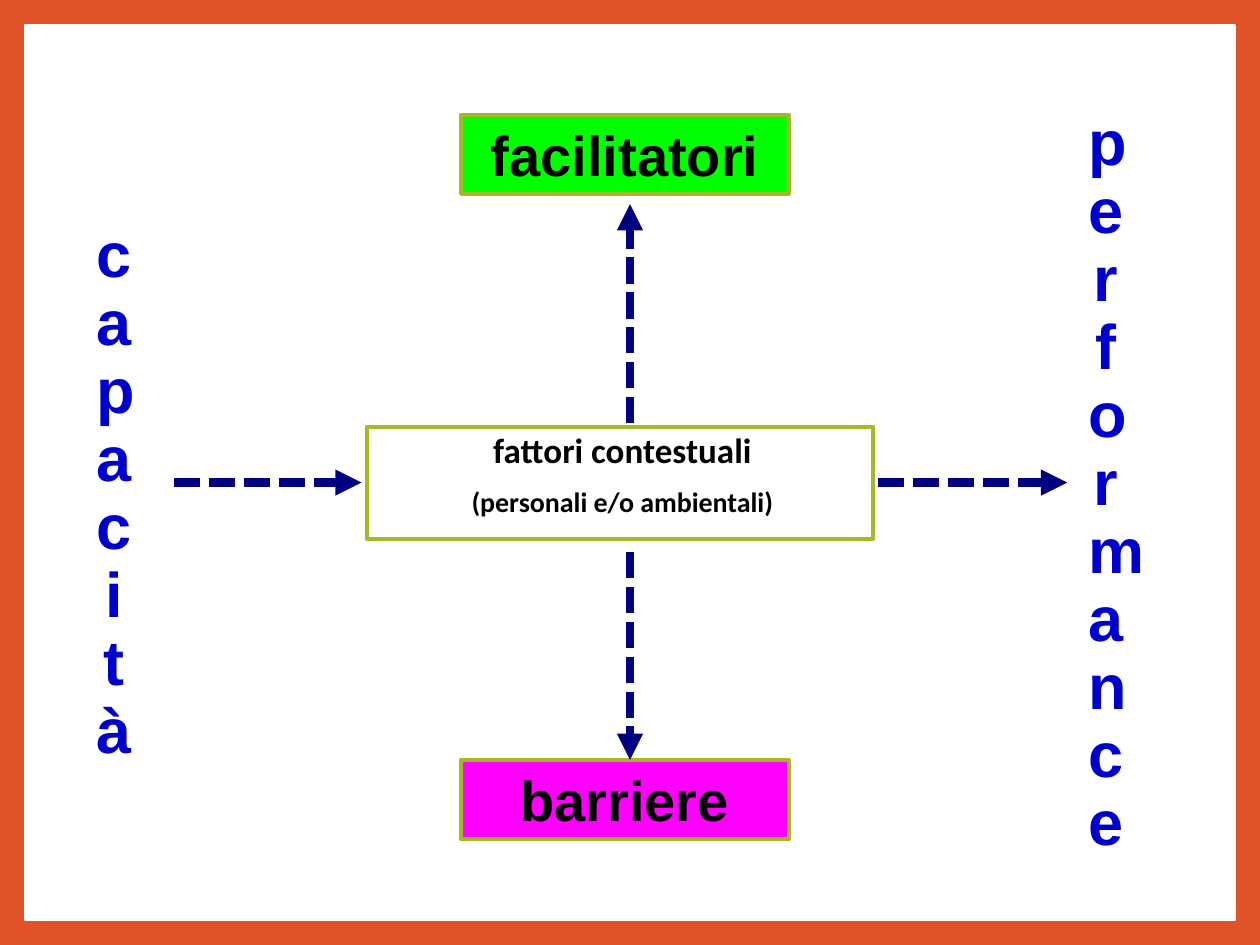
from typing import NamedTuple

from lxml.etree import SubElement
from pptx import Presentation
from pptx.dml.color import RGBColor
from pptx.enum.dml import MSO_LINE
from pptx.enum.shapes import MSO_CONNECTOR, MSO_SHAPE
from pptx.enum.text import MSO_ANCHOR, MSO_AUTO_SIZE, PP_ALIGN
from pptx.oxml.ns import qn
from pptx.util import Inches, Pt

COLORS = {
    "frame": "DF5327", "panel": "FFFFFF", "border": "A6B727",
    "facilitators": "00FF00", "barriers": "FF00FF",
    "text": "000000", "vertical": "0000CC", "arrow": "000080",
}


class Box(NamedTuple):
    text: str
    top: float
    color: str


class VerticalWord(NamedTuple):
    text: str
    left: float
    top: float
    height: float


class Arrow(NamedTuple):
    start: tuple[float, float]
    end: tuple[float, float]


BOXES = [
    Box("facilitatori", 0.91, "facilitators"),
    Box("barriere", 6.03, "barriers"),
]
WORDS = [
    VerticalWord("capacità", 0.67, 1.7, 4.46),
    VerticalWord("performance", 8.54, 0.8, 6.1),
]
CENTER_X, CENTER_Y = 5, 3.83
ARROWS = [
    Arrow((1.38, CENTER_Y), (2.87, CENTER_Y)),
    Arrow((6.97, CENTER_Y), (8.47, CENTER_Y)),
    Arrow((CENTER_X, 3.36), (CENTER_X, 1.62)),
    Arrow((CENTER_X, 4.38), (CENTER_X, 6.03)),
]
CONTEXT_LINES = [("fattori contestuali", 20), ("(personali e/o ambientali)", 16)]


def rgb(name: str) -> RGBColor:
    return RGBColor.from_string(COLORS[name])


def paint(shape, fill: str, line: str, width: float) -> None:
    shape.fill.solid()
    shape.fill.fore_color.rgb = rgb(fill)
    shape.line.color.rgb = rgb(line)
    shape.line.width = Pt(width)


def format_paragraph(paragraph, font: str, size: float, color: str, before: float) -> None:
    paragraph.alignment = PP_ALIGN.CENTER
    paragraph.space_before = Pt(before)
    paragraph.font.name = font
    paragraph.font.size = Pt(size)
    paragraph.font.bold = True
    paragraph.font.color.rgb = rgb(color)


def add_rectangle(slide, left: float, top: float, width: float, height: float):
    shape = slide.shapes.add_shape(
        MSO_SHAPE.RECTANGLE, Inches(left), Inches(top), Inches(width), Inches(height))
    shape.shadow.inherit = False
    return shape


def add_context(slide) -> None:
    """Fill the subtitle placeholder with the contextual factors."""
    shape = slide.placeholders[1]
    shape.left, shape.top = Inches(2.91), Inches(3.39)
    shape.width, shape.height = Inches(4.02), Inches(0.89)
    paint(shape, "panel", "border", 2.25)
    frame = shape.text_frame
    frame.auto_size = MSO_AUTO_SIZE.NONE
    frame.vertical_anchor = MSO_ANCHOR.TOP
    frame.text = "\n".join(text for text, _ in CONTEXT_LINES)
    for paragraph, (_, size) in zip(frame.paragraphs, CONTEXT_LINES):
        format_paragraph(paragraph, "Calibri", size, "text", 10)
        paragraph.line_spacing = 0.9
        properties = paragraph._p.get_or_add_pPr()
        properties.set("marL", str(Inches(0.19)))
        properties.set("indent", str(Inches(-0.15)))


def add_vertical_word(slide, word: VerticalWord) -> None:
    """Add a box so narrow that each letter wraps onto its own line."""
    shape = slide.shapes.add_textbox(
        Inches(word.left), Inches(word.top), Inches(0.47), Inches(word.height))
    frame = shape.text_frame
    frame.word_wrap = True
    frame.vertical_anchor = MSO_ANCHOR.MIDDLE
    frame.text = word.text
    paragraph = frame.paragraphs[0]
    format_paragraph(paragraph, "Arial", 36, "vertical", 7)
    paragraph.line_spacing = 0.9


def add_box(slide, box: Box) -> None:
    shape = add_rectangle(slide, 3.66, box.top, 2.6, 0.63)
    paint(shape, box.color, "border", 2.25)
    frame = shape.text_frame
    frame.vertical_anchor = MSO_ANCHOR.TOP
    frame.text = box.text
    format_paragraph(frame.paragraphs[0], "Arial", 32, "text", 6)


def add_arrow(slide, arrow: Arrow) -> None:
    points = [Inches(value) for value in (*arrow.start, *arrow.end)]
    connector = slide.shapes.add_connector(MSO_CONNECTOR.STRAIGHT, *points)
    connector.line.color.rgb = rgb("arrow")
    connector.line.width = Pt(5)
    connector.line.dash_style = MSO_LINE.SQUARE_DOT
    SubElement(connector.line._get_or_add_ln(), qn("a:tailEnd"), type="triangle")
    SubElement(connector._element.spPr, qn("a:effectLst"))


def main() -> None:
    presentation = Presentation()
    presentation.slide_width, presentation.slide_height = Inches(10), Inches(7.5)
    slide = presentation.slides.add_slide(presentation.slide_layouts[0])
    slide.background.fill.solid()
    slide.background.fill.fore_color.rgb = rgb("frame")

    title = slide.shapes.title._element
    title.getparent().remove(title)
    panel = add_rectangle(slide, 0.2, 0.2, 9.6, 7.1)
    paint(panel, "panel", "panel", 1)
    slide.placeholders[1]._element.addprevious(panel._element)

    add_context(slide)
    for word in WORDS:
        add_vertical_word(slide, word)
    for box in BOXES:
        add_box(slide, box)
    for arrow in ARROWS:
        add_arrow(slide, arrow)
    presentation.save("out.pptx")


if __name__ == "__main__":
    main()
